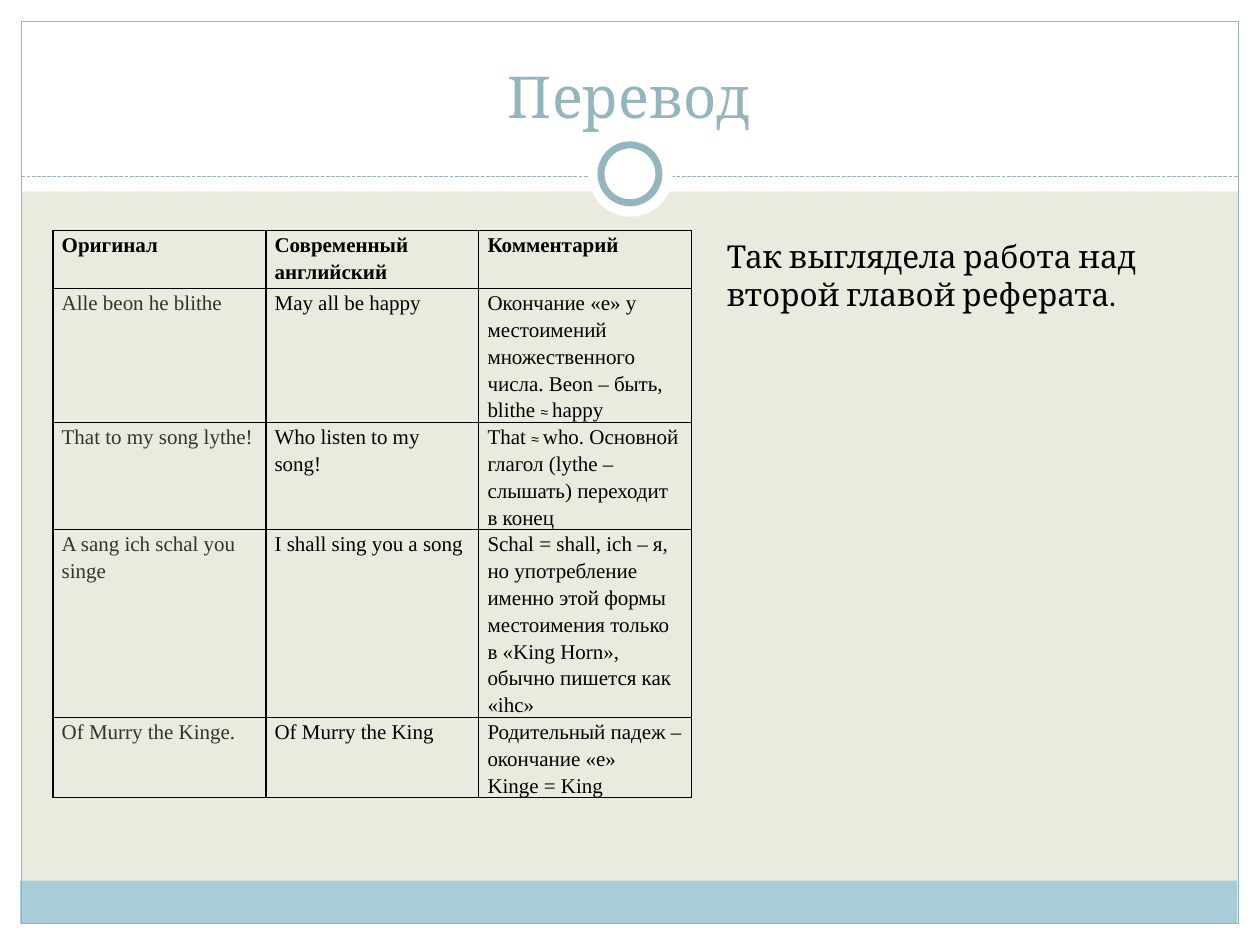
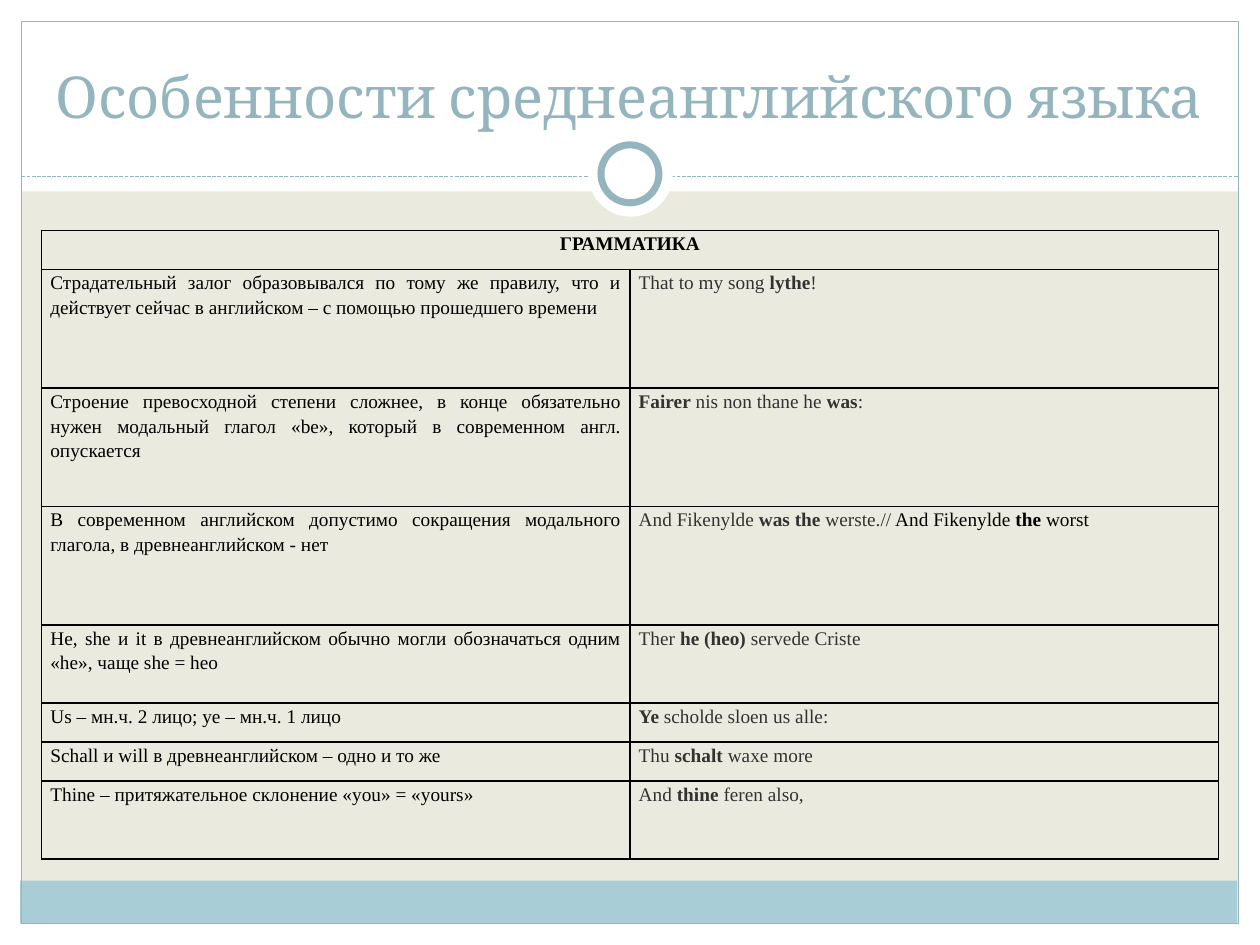
from lxml import etree
from pptx import Presentation
from pptx.dml.color import RGBColor
from pptx.enum.dml import MSO_LINE
from pptx.enum.shapes import MSO_CONNECTOR, MSO_SHAPE
from pptx.enum.text import MSO_ANCHOR, MSO_AUTO_SIZE, PP_ALIGN
from pptx.oxml.ns import qn
from pptx.util import Inches, Pt

# Colours, fonts and enum members
WHITE = RGBColor(0xFF, 0xFF, 0xFF)
BLACK = RGBColor(0, 0, 0)
DARK = RGBColor(0x32, 0x32, 0x32)
SAND = RGBColor(0xEA, 0xEB, 0xDE)
TEAL = RGBColor(0x94, 0xB5, 0xBE)
SKY = RGBColor(0xA8, 0xCD, 0xD7)
HEAD, BODY = "Cambria", "Times New Roman"
RECT, OVAL = MSO_SHAPE.RECTANGLE, MSO_SHAPE.OVAL
LEFT, MID, JUST = PP_ALIGN.LEFT, PP_ALIGN.CENTER, PP_ALIGN.JUSTIFY
DASH = MSO_LINE.SQUARE_DOT

# Run formats that differ from the rest of a text
BOLD = {"bold": True}
INK = {"color": BLACK}
TINY = {"size": 8, "font": "Arial"}


def write(frame, text, align=LEFT, space=None, **base):
    """Fill a frame with a string or a list of strings and (string, format) pairs."""
    para = frame.paragraphs[0]
    para.alignment, para.line_spacing = align, space
    for piece in [text] if isinstance(text, str) else text:
        words, extra = (piece, {}) if isinstance(piece, str) else piece
        look = {"bold": False, "color": BLACK, **base, **extra}
        for i, line in enumerate(words.split("\n")):
            if i:
                para = frame.add_paragraph()
                para.alignment, para.line_spacing = align, space
            run = para.add_run()
            run.text = line
            run.font.name = look["font"]
            run.font.size = Pt(look["size"])
            run.font.bold = look["bold"]
            run.font.color.rgb = look["color"]


def draw_table(slide, left, top, cols, rows, cells, align, size):
    """Draw a bordered table; the first row is bold, the dark column is the quotes."""
    frame = slide.shapes.add_table(len(rows), len(cols), Inches(left), Inches(top),
                                   Inches(sum(cols)), Inches(sum(rows)))
    table = frame.table
    table.first_row = table.horz_banding = False
    for col, width in zip(table.columns, cols):
        col.width = Inches(width)
    for row, high in zip(table.rows, rows):
        row.height = Inches(high)
    quote = 0 if len(cols) == 3 else 1
    for r, row in enumerate(cells):
        for c, text in enumerate(row):
            cell = table.cell(r, c)
            cell.margin_left = cell.margin_right = Inches(0.07)
            cell.margin_top = cell.margin_bottom = 0
            cell.fill.background()
            props = cell._tc.get_or_add_tcPr()
            for i, side in enumerate(("lnL", "lnR", "lnT", "lnB")):
                edge = etree.Element(qn("a:" + side), w=str(Pt(1)))
                fill = etree.SubElement(edge, qn("a:solidFill"))
                etree.SubElement(fill, qn("a:srgbClr"), val=str(BLACK))
                props.insert(i, edge)
            if text:
                write(cell.text_frame, text, font=BODY, size=size, space=1.15,
                      align=align if r else (MID if len(row) == 2 else LEFT), bold=r == 0,
                      color=DARK if r and c == quote else BLACK)
    return table


deck = Presentation()
deck.slide_width, deck.slide_height = Inches(10), Inches(7.5)
layout = deck.slide_layouts[5]
layout.background.fill.solid()
layout.background.fill.fore_color.rgb = SAND

# Slides with their titles
slides = []
for name in ("Перевод", "Особенности среднеанглийского языка"):
    slide = deck.slides.add_slide(layout)
    title = slide.shapes.title
    title.left, title.top = Inches(0.33), Inches(0.25)
    title.width, title.height = Inches(9.33), Inches(0.83)
    title.text_frame.auto_size = MSO_AUTO_SIZE.NONE
    title.text_frame.vertical_anchor = MSO_ANCHOR.BOTTOM
    write(title.text_frame, name, align=MID, font=HEAD, size=33, color=TEAL)
    slides.append(slide)
first, last = slides

# Shared frame: drawn once, then moved to the layout
decor = [
    (RECT, 0, 7.33, 10, 0.17, WHITE, 0),
    (RECT, 0, 0, 10, 1.52, WHITE, 0),
    (RECT, 0, 0, 0.17, 7.5, WHITE, 0),
    (RECT, 9.83, 0, 0.17, 7.5, WHITE, 0),
    (RECT, 0.16, 6.99, 9.66, 0.34, SKY, 0),
    (RECT, 0.17, 0.17, 9.66, 7.16, None, 0.75),
    (None, 0.17, 1.4, 9.83, 1.4, None, 0.75),
    (OVAL, 4.67, 1.05, 0.67, 0.67, WHITE, 0),
    (OVAL, 4.77, 1.15, 0.46, 0.46, WHITE, 4),
]
for kind, *box, fill, width in decor:
    box = [Inches(n) for n in box]
    if kind is None:
        part = first.shapes.add_connector(MSO_CONNECTOR.STRAIGHT, *box)
        part.line.dash_style = DASH
    else:
        part = first.shapes.add_shape(kind, *box)
        part.shadow.inherit = False
        if fill is None:
            part.fill.background()
        else:
            part.fill.solid()
            part.fill.fore_color.rgb = fill
    if width:
        part.line.color.rgb = TEAL
        part.line.width = Pt(width)
    else:
        part.line.fill.background()
    if kind is None:
        etree.SubElement(part.element.spPr, qn("a:effectLst"))
    layout.shapes.element.append(part.element)

# Slide 1: translation table and remark
lines = [
    ("Оригинал", "Современный английский", "Комментарий"),
    ("Alle beon he blithe", "May all be happy",
     ["Окончание «e» у местоимений множественного числа. Beon – быть, blithe ",
      ("≈ ", TINY), "happy"]),
    ("That to my song lythe!", "Who listen to my song!",
     ["That ", ("≈ ", TINY),
      "who. Основной глагол (lythe – слышать) переходит в конец"]),
    ("A sang ich schal you singe", "I shall sing you a song",
     "Schal = shall, ich – я, но употребление именно этой формы местоимения "
     "только в «King Horn», обычно пишется как «ihc»"),
    ("Of Murry the Kinge.", "Of Murry the King",
     "Родительный падеж – окончание «e»\nKinge = King"),
]
draw_table(first, 0.42, 1.83, [1.69] * 3, [0.46, 0.81, 0.61, 1.02, 0.61],
           lines, LEFT, 12)

note = first.shapes.add_textbox(Inches(5.67), Inches(1.83), Inches(3.67), Inches(0.71))
note.text_frame.word_wrap = True
note.text_frame.auto_size = MSO_AUTO_SIZE.SHAPE_TO_FIT_TEXT
write(note.text_frame, "Так выглядела работа над второй главой реферата.",
      font=HEAD, size=18)

# Slide 2: grammar table
rules = [
    ("ГРАММАТИКА", None),
    ("Страдательный залог образовывался по тому же правилу, что и действует "
     "сейчас в английском – с помощью прошедшего времени",
     ["That to my song ", ("lythe", BOLD), "!"]),
    ("Строение превосходной степени сложнее, в конце обязательно нужен модальный "
     "глагол «be», который в современном англ. опускается",
     [("Fairer", BOLD), " nis non thane he ", ("was", BOLD), ":"]),
    ("В современном английском допустимо сокращения модального глагола, "
     "в древнеанглийском - нет",
     ["And Fikenylde ", ("was the", BOLD), " werste.//", (" And Fikenylde ", INK),
      ("the ", {**BOLD, **INK}), ("worst", INK)]),
    ("He, she и it в древнеанглийском обычно могли обозначаться одним «he», "
     "чаще she = heo",
     ["Ther ", ("he (heo)", BOLD), " servede Criste"]),
    ("Us – мн.ч. 2 лицо; ye – мн.ч. 1 лицо",
     [("Ye", BOLD), " scholde sloen us alle:"]),
    ("Schall и will в древнеанглийском – одно и то же",
     ["Thu ", ("schalt", BOLD), " waxe more"]),
    ("Thine – притяжательное склонение «you» = «yours»",
     ["And ", ("thine ", BOLD), "feren also,"]),
]
grid = draw_table(last, 0.33, 1.83, [4.67] * 2,
                  [0.31, 0.94, 0.94, 0.94, 0.62, 0.31, 0.31, 0.62], rules, JUST, 11)
grid.cell(0, 0).merge(grid.cell(0, 1))

deck.save("out.pptx")
